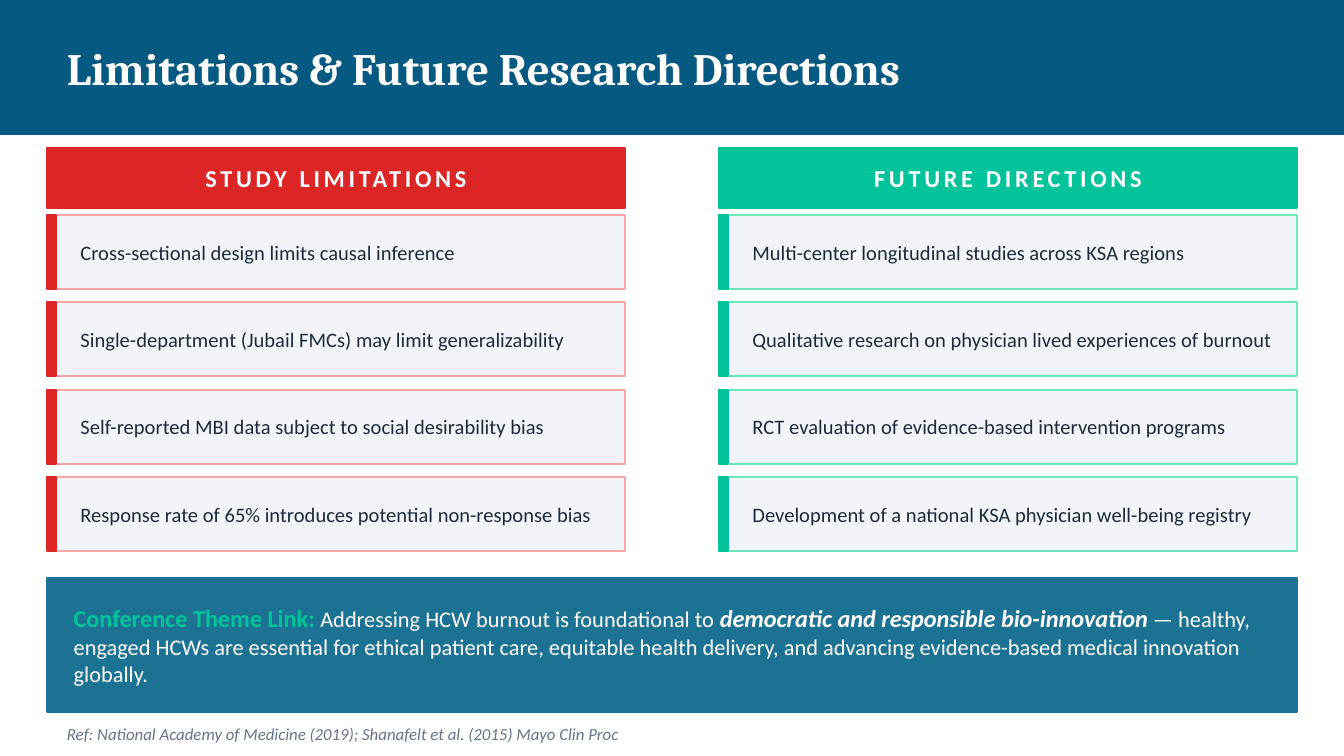
from dataclasses import dataclass

from pptx import Presentation
from pptx.dml.color import RGBColor
from pptx.enum.shapes import MSO_SHAPE
from pptx.enum.text import MSO_ANCHOR, PP_ALIGN
from pptx.util import Inches, Pt


@dataclass(frozen=True)
class Theme:
    navy: str = "065A82"
    teal: str = "1C7293"
    red: str = "DC2626"
    pink: str = "FCA5A5"
    green: str = "02C39A"
    mint: str = "6EE7B7"
    pale: str = "F1F5F9"
    ink: str = "1E293B"
    gray: str = "64748B"
    white: str = "FFFFFF"
    serif: str = "Cambria"
    sans: str = "Calibri"
    title: int = 24
    head: int = 13
    lead: int = 12
    body: int = 11
    note: int = 9


@dataclass(frozen=True)
class Grid:
    """Two columns of cards, in inches."""
    wide: float = 10
    high: float = 5.625
    left: float = 0.35
    top: float = 1.6
    col: float = 4.3
    row: float = 0.55
    gap: float = 0.7
    space: float = 0.1

    def x(self, col):
        return self.left + col * (self.col + self.gap)

    def y(self, row):
        return self.top + row * (self.row + self.space)

    @property
    def span(self):
        return 2 * self.col + self.gap


THEME = Theme()
GRID = Grid()

LIMITS = [
    "Cross-sectional design limits causal inference",
    "Single-department (Jubail FMCs) may limit generalizability",
    "Self-reported MBI data subject to social desirability bias",
    "Response rate of 65% introduces potential non-response bias",
]
PLANS = [
    "Multi-center longitudinal studies across KSA regions",
    "Qualitative research on physician lived experiences of burnout",
    "RCT evaluation of evidence-based intervention programs",
    "Development of a national KSA physician well-being registry",
]


def add_rect(slide, box, fill, line=None):
    rect = slide.shapes.add_shape(MSO_SHAPE.RECTANGLE, *map(Inches, box))
    rect.shadow.inherit = False
    rect.fill.solid()
    rect.fill.fore_color.rgb = RGBColor.from_string(fill)
    rect.line.color.rgb = RGBColor.from_string(line or fill)
    rect.line.width = Pt(1)


def add_run(para, text, size=THEME.body, color=THEME.ink, face=THEME.sans,
            bold=False, italic=False, track=0):
    """Add text to a paragraph; track is letter spacing in points."""
    run = para.add_run()
    run.text = text
    font = run.font
    font.size, font.name = Pt(size), face
    font.bold, font.italic = bold, italic
    font.color.rgb = RGBColor.from_string(color)
    if track:
        run._r.get_or_add_rPr().set("spc", str(track * 100))


def add_text(slide, box, text="", align=PP_ALIGN.LEFT, inset=True, **style):
    """Add a text box and return its paragraph."""
    frame = slide.shapes.add_textbox(*map(Inches, box)).text_frame
    frame.word_wrap = True
    frame.vertical_anchor = MSO_ANCHOR.MIDDLE
    if not inset:
        frame.margin_left = frame.margin_right = 0
        frame.margin_top = frame.margin_bottom = 0
    para = frame.paragraphs[0]
    para.alignment = align
    if text:
        add_run(para, text, **style)
    return para


def add_card(slide, col, row, text, tone, edge):
    x, y = GRID.x(col), GRID.y(row)
    add_rect(slide, (x, y, GRID.col, GRID.row), THEME.pale, edge)
    add_rect(slide, (x, y, 0.07, GRID.row), tone)
    add_text(slide, (x + 0.15, y, GRID.col - 0.23, GRID.row), text)


def add_column(slide, col, head, items, tone, edge):
    box = (GRID.x(col), GRID.top - 0.5, GRID.col, 0.45)
    add_rect(slide, box, tone)
    add_text(slide, box, head, align=PP_ALIGN.CENTER, inset=False,
             size=THEME.head, color=THEME.white, bold=True, track=2)
    for row, text in enumerate(items):
        add_card(slide, col, row, text, tone, edge)


def add_theme_link(slide):
    y = GRID.y(4) + GRID.space
    add_rect(slide, (GRID.left, y, GRID.span, 1), THEME.teal)
    para = add_text(slide, (GRID.left + 0.1, y, GRID.span - 0.2, 1))
    plain = {"size": THEME.lead, "color": THEME.white}
    add_run(para, "Conference Theme Link: ", size=THEME.head,
            color=THEME.green, bold=True)
    add_run(para, "Addressing HCW burnout is foundational to ", **plain)
    add_run(para, "democratic and responsible bio-innovation",
            size=THEME.head, color=THEME.white, bold=True, italic=True)
    add_run(para, " — healthy, engaged HCWs are essential for ethical patient "
            "care, equitable health delivery, and advancing evidence-based "
            "medical innovation globally.", **plain)


def main():
    deck = Presentation()
    deck.slide_width, deck.slide_height = Inches(GRID.wide), Inches(GRID.high)
    slide = deck.slides.add_slide(deck.slide_layouts[6])
    inner = 0.92 * GRID.wide
    edge = 0.04 * GRID.wide

    add_rect(slide, (0, 0, GRID.wide, 1), THEME.navy)
    add_text(slide, (edge, 0, inner, 1),
             "Limitations & Future Research Directions", size=THEME.title,
             color=THEME.white, face=THEME.serif, bold=True)
    add_column(slide, 0, "STUDY LIMITATIONS", LIMITS, THEME.red, THEME.pink)
    add_column(slide, 1, "FUTURE DIRECTIONS", PLANS, THEME.green, THEME.mint)
    add_theme_link(slide)
    add_text(slide, (edge, 5.35, inner, 0.22),
             "Ref: National Academy of Medicine (2019); "
             "Shanafelt et al. (2015) Mayo Clin Proc",
             size=THEME.note, color=THEME.gray, italic=True)
    deck.save("out.pptx")


if __name__ == "__main__":
    main()
